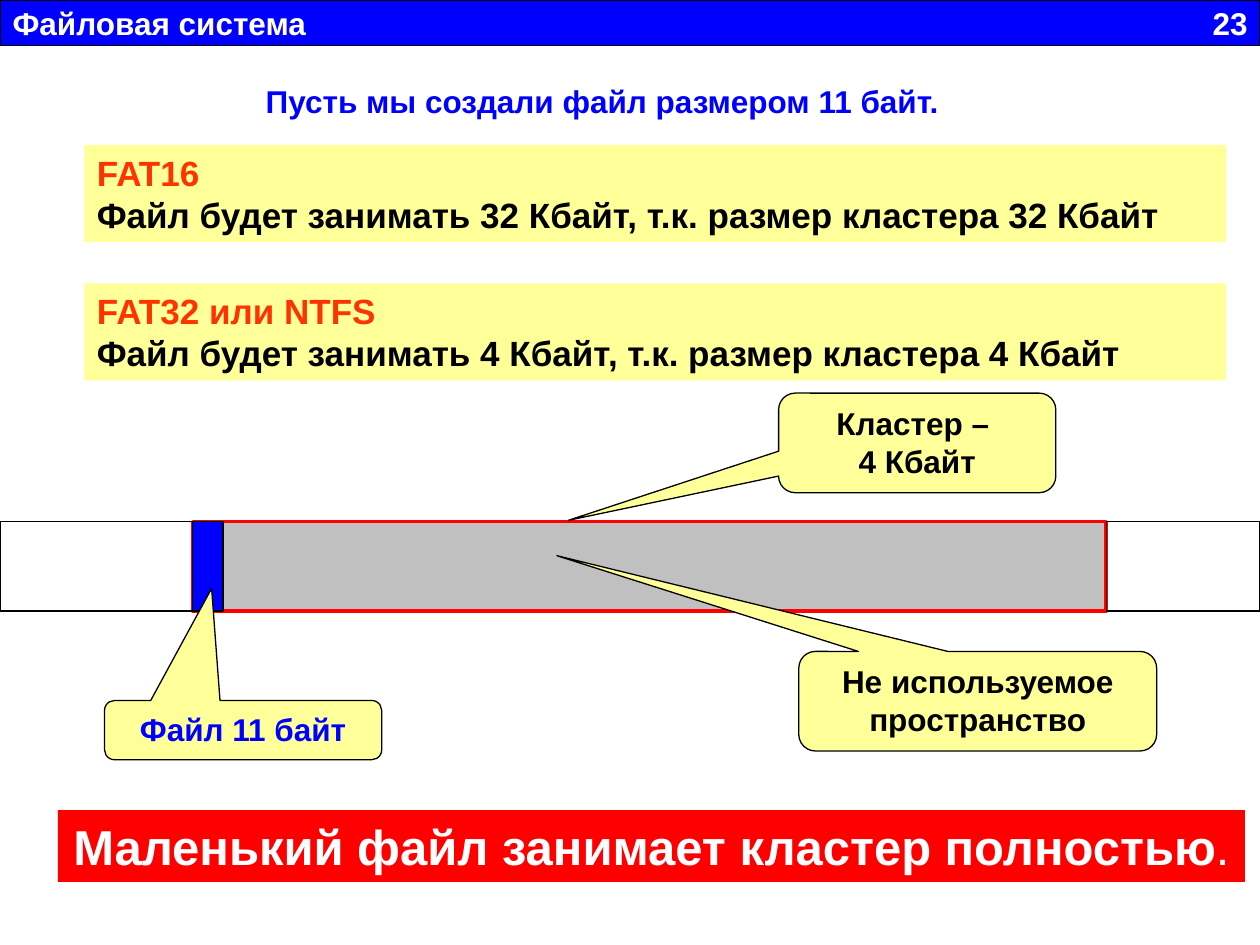
from pptx import Presentation
from pptx import util as u
from pptx.dml import color
from pptx.enum import shapes, text

BLUE, RED, YELLOW, ORANGE = "0000FF", "FF0000", "FFFF99", "FF3300"
BLACK, WHITE, GRAY = "000000", "FFFFFF", "C0C0C0"
LEFT, CENTER = text.PP_ALIGN.LEFT, text.PP_ALIGN.CENTER
RIGHT = text.PP_ALIGN.RIGHT
TOP, MIDDLE = text.MSO_ANCHOR.TOP, text.MSO_ANCHOR.MIDDLE


def rgb(code):
    return color.RGBColor.from_string(code)


def set_all(target, values):
    for name, value in values.items():
        setattr(target, name, value)


def place(part, box):
    set_all(part, dict(zip(("left", "top", "width", "height"), map(u.Inches, box))))


def paint(part, fill=None, line=None, weight=0.75):
    if fill:
        part.fill.solid()
        part.fill.fore_color.rgb = rgb(fill)
    else:
        part.fill.background()
    if line:
        part.line.color.rgb = rgb(line)
        part.line.width = u.Pt(weight)
    else:
        part.line.fill.background()


def write(part, lines, size=18, align=LEFT, anchor=TOP, wrap=True):
    frame = part.text_frame
    set_all(frame, {
        "auto_size": text.MSO_AUTO_SIZE.NONE,
        "word_wrap": wrap,
        "vertical_anchor": anchor,
    })
    for index, runs in enumerate(lines):
        paragraph = frame.add_paragraph() if index else frame.paragraphs[0]
        paragraph.alignment = align
        for words, ink, bold in runs:
            run = paragraph.add_run()
            run.text = words
            set_all(run.font, {"name": "Arial", "size": u.Pt(size), "bold": bold})
            run.font.color.rgb = rgb(ink)


def add_block(slide, box, kind=shapes.MSO_SHAPE.RECTANGLE, **colours):
    block = slide.shapes.add_shape(kind, *map(u.Inches, box))
    block.shadow.inherit = False
    paint(block, **colours)
    return block


def add_label(slide, box, words, ink, align):
    label = slide.shapes.add_textbox(*map(u.Inches, box))
    write(label, [[(words, ink, True)]], align=align, anchor=MIDDLE)


def add_header(slide, box, topic, number):
    header = slide.shapes.title
    place(header, box)
    paint(header, BLUE, BLACK)
    write(header, [[(topic, WHITE, True)]], anchor=MIDDLE)
    left, top, width, height = box
    add_label(slide, (left + width - 1, top, 1, height), number, WHITE, RIGHT)


def add_system_panel(slide, box, system, result):
    panel = add_block(slide, box, fill=YELLOW)
    write(panel, [[(system, ORANGE, True)], [(result, BLACK, True)]], size=20)


def add_disk(slide, box, cluster_left, cluster_width, file_width):
    left, top, width, height = box
    cluster_right = cluster_left + cluster_width
    add_block(slide, (cluster_left, top, cluster_width, height),
              fill=GRAY, line=RED, weight=2)
    add_block(slide, (cluster_left, top, file_width, height), fill=BLUE, line=BLACK)
    for start, end in ((cluster_right, left + width), (left, cluster_left)):
        add_block(slide, (start, top, end - start, height), line=BLACK)


def add_callout(slide, box, tip, lines, ink=BLACK):
    callout = add_block(slide, box, shapes.MSO_SHAPE.ROUNDED_RECTANGULAR_CALLOUT,
                        fill=YELLOW, line=BLACK)
    left, top, width, height = box
    callout.adjustments[0] = (tip[0] - left) / width - 0.5
    callout.adjustments[1] = (tip[1] - top) / height - 0.5
    write(callout, [[(line, ink, True)] for line in lines], align=CENTER)


def add_conclusion(slide, box, words):
    banner = add_block(slide, box, fill=RED)
    write(banner, [[(words, WHITE, True), (".", WHITE, False)]],
          size=28, align=CENTER, wrap=False)


def main():
    deck = Presentation()
    set_all(deck, {"slide_width": u.Inches(10), "slide_height": u.Inches(7.5)})
    slide = deck.slides.add_slide(deck.slide_layouts[5])

    add_header(slide, (0, 0, 10, 0.36), "Файловая система", "23")
    add_label(slide, (1.78, 0.6, 6, 0.4),
              "Пусть мы создали файл размером 11 байт.", BLUE, CENTER)

    systems = (("FAT16", 32), ("FAT32 или NTFS", 4))
    for row, (system, size) in enumerate(systems):
        add_system_panel(
            slide, (0.67, 1.15 + 1.1 * row, 9.06, 0.77), system,
            f"Файл будет занимать {size} Кбайт, т.к. размер кластера {size} Кбайт")

    add_disk(slide, (0, 4.14, 10, 0.71),
             cluster_left=1.53, cluster_width=7.25, file_width=0.24)
    add_callout(slide, (6.34, 5.17, 2.84, 0.79), (4.42, 4.41),
                ["Не используемое пространство"])
    add_callout(slide, (0.83, 5.56, 2.2, 0.47), (1.68, 4.67),
                ["Файл 11 байт"], BLUE)
    add_callout(slide, (6.18, 3.12, 2.2, 0.79), (4.51, 4.13),
                ["Кластер – ", "4 Кбайт"])
    add_conclusion(slide, (0.46, 6.43, 9.42, 0.57),
                   "Маленький файл занимает кластер полностью")
    deck.save("out.pptx")


if __name__ == "__main__":
    main()
